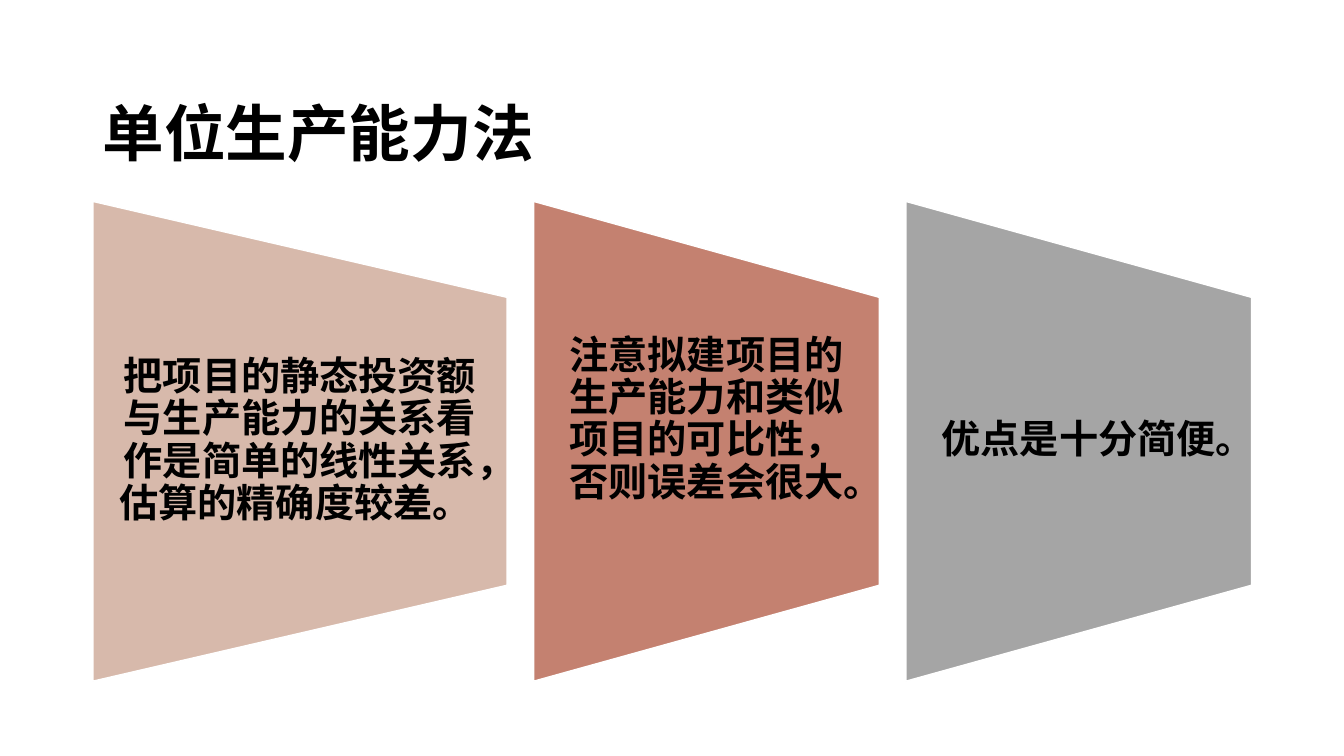
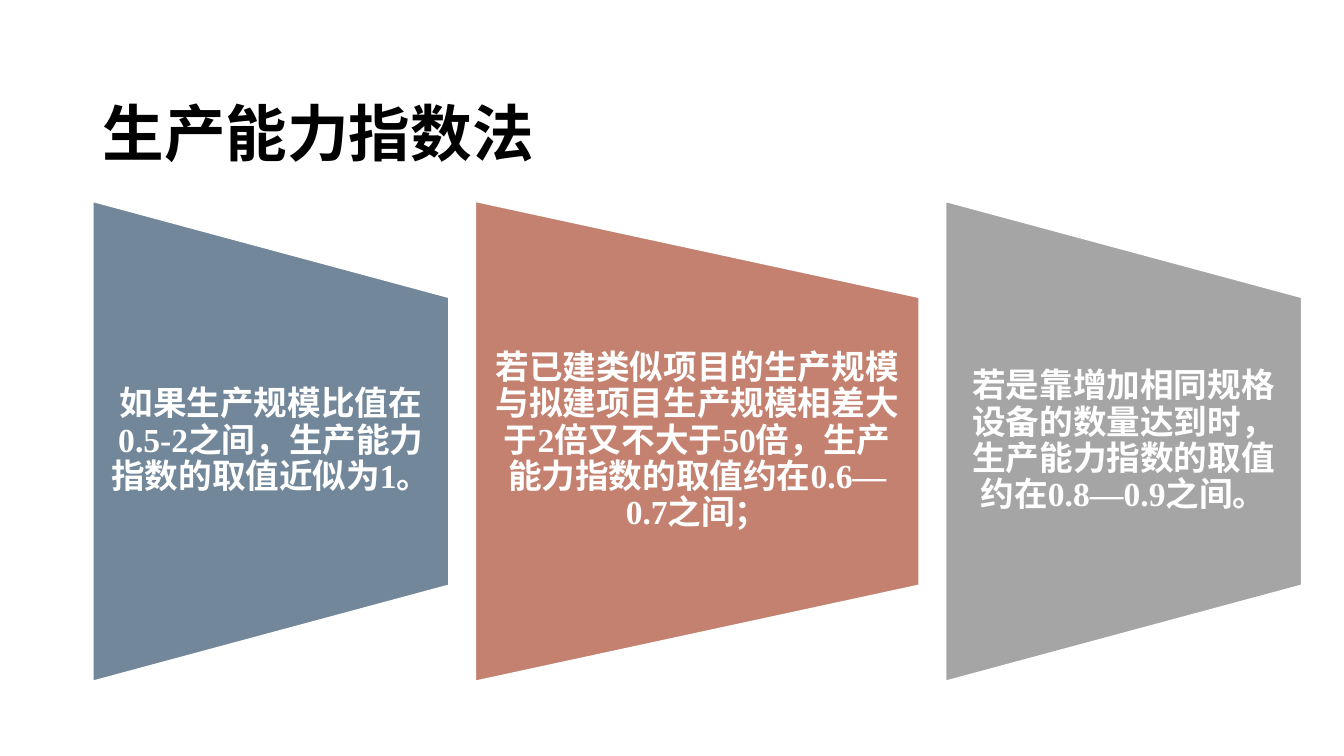
from pptx import Presentation
from pptx.dml.color import RGBColor
from pptx.enum.lang import MSO_LANGUAGE_ID as Language
from pptx.enum.shapes import MSO_SHAPE as Preset
from pptx.enum.text import MSO_ANCHOR as Anchor, MSO_AUTO_SIZE as AutoSize, PP_ALIGN as Align
from pptx.oxml.ns import qn
from pptx.util import Cm, Pt
from lxml.etree import SubElement

BLACK = RGBColor(0x00, 0x00, 0x00)
WHITE = RGBColor(0xFF, 0xFF, 0xFF)
SAND = RGBColor(0xD7, 0xB9, 0xAB)
CLAY = RGBColor(0xC4, 0x81, 0x70)
SLATE = RGBColor(0x72, 0x87, 0x99)
GREY = RGBColor(0xA5, 0xA5, 0xA5)

SERIF = "Times New Roman"
SANS = "Noto Sans CJK SC"


class MethodDeck:
    """Holds the shared style and the current slide."""

    left, gap = Cm(2.34), Cm(0.67)
    middle = Cm(11.12)
    panel_height, text_height = Cm(12.09), Cm(7.26)

    def __init__(self):
        self.deck = Presentation()
        self.deck.slide_width, self.deck.slide_height = Cm(33.87), Cm(19.05)
        self.page = None

    def set_text(self, frame, text, font, size, color, align, spacing):
        frame.word_wrap = True
        frame.auto_size = AutoSize.NONE
        frame.vertical_anchor = Anchor.MIDDLE
        para = frame.paragraphs[0]
        para.text = text
        para.alignment = align
        para.line_spacing = spacing
        for span in para.runs:
            span.font.name = font
            span.font.size = Pt(size)
            span.font.bold = True
            span.font.color.rgb = color
            span.font.language_id = Language.SIMPLIFIED_CHINESE
            SubElement(span.font._element, qn("a:ea")).set("typeface", SANS)

    def add_page(self, title):
        self.page = self.deck.slides.add_slide(self.deck.slide_layouts[5])
        box = self.page.shapes.title
        box.left, box.top, box.width, box.height = Cm(2.33), Cm(1.01), Cm(29.21), Cm(3.68)
        self.set_text(box.text_frame, title, SERIF, 44, BLACK, Align.JUSTIFY, 1.5)

    def add_panel(self, left, width, fill):
        panel = self.page.shapes.add_shape(
            Preset.FLOWCHART_MANUAL_OPERATION,
            left + (width - self.panel_height) // 2, self.middle - width // 2,
            self.panel_height, width)
        panel.rotation = 270
        panel.shadow.inherit = False
        panel.fill.solid()
        panel.fill.fore_color.rgb = fill
        panel.line.color.rgb = WHITE
        panel.line.width = Pt(1)

    def add_label(self, left, width, text, font, size, color, inset):
        box = self.page.shapes.add_textbox(
            left, self.middle - self.text_height // 2, width, self.text_height)
        frame = box.text_frame
        frame.margin_left = frame.margin_right = inset
        frame.margin_top = frame.margin_bottom = 0
        self.set_text(frame, text, font, size, color, Align.CENTER, 0.9)

    def add_panels(self, panels, font, size, color, inset):
        left = self.left
        for width, fill, text in panels:
            self.add_panel(left, width, fill)
            self.add_label(left, width, text, font, size, color, inset)
            left += width + self.gap

    def save(self):
        self.deck.save("out.pptx")


def main():
    deck = MethodDeck()
    deck.add_page("单位生产能力法 ")
    deck.add_panels([
        (Cm(10.44), SAND, "把项目的静态投资额与生产能力的关系看作是简单的线性关系，估算的精确度较差。 "),
        (Cm(8.71), CLAY, "注意拟建项目的生产能力和类似项目的可比性，否则误差会很大。 "),
        (Cm(8.71), GREY, "优点是十分简便。"),
    ], SANS, 28, BLACK, Cm(0.49))
    deck.add_page("生产能力指数法 ")
    deck.add_panels([
        (Cm(8.97), SLATE, "如果生产规模比值在0.5-2之间，生产能力指数的取值近似为1。"),
        (Cm(11.18), CLAY, "若已建类似项目的生产规模与拟建项目生产规模相差大于2倍又不大于50倍，"
                          "生产能力指数的取值约在0.6—0.7之间；"),
        (Cm(8.97), GREY, "若是靠增加相同规格设备的数量达到时，生产能力指数的取值约在0.8—0.9之间。"),
    ], SERIF, 24, WHITE, Cm(0.42))
    deck.save()


if __name__ == "__main__":
    main()
